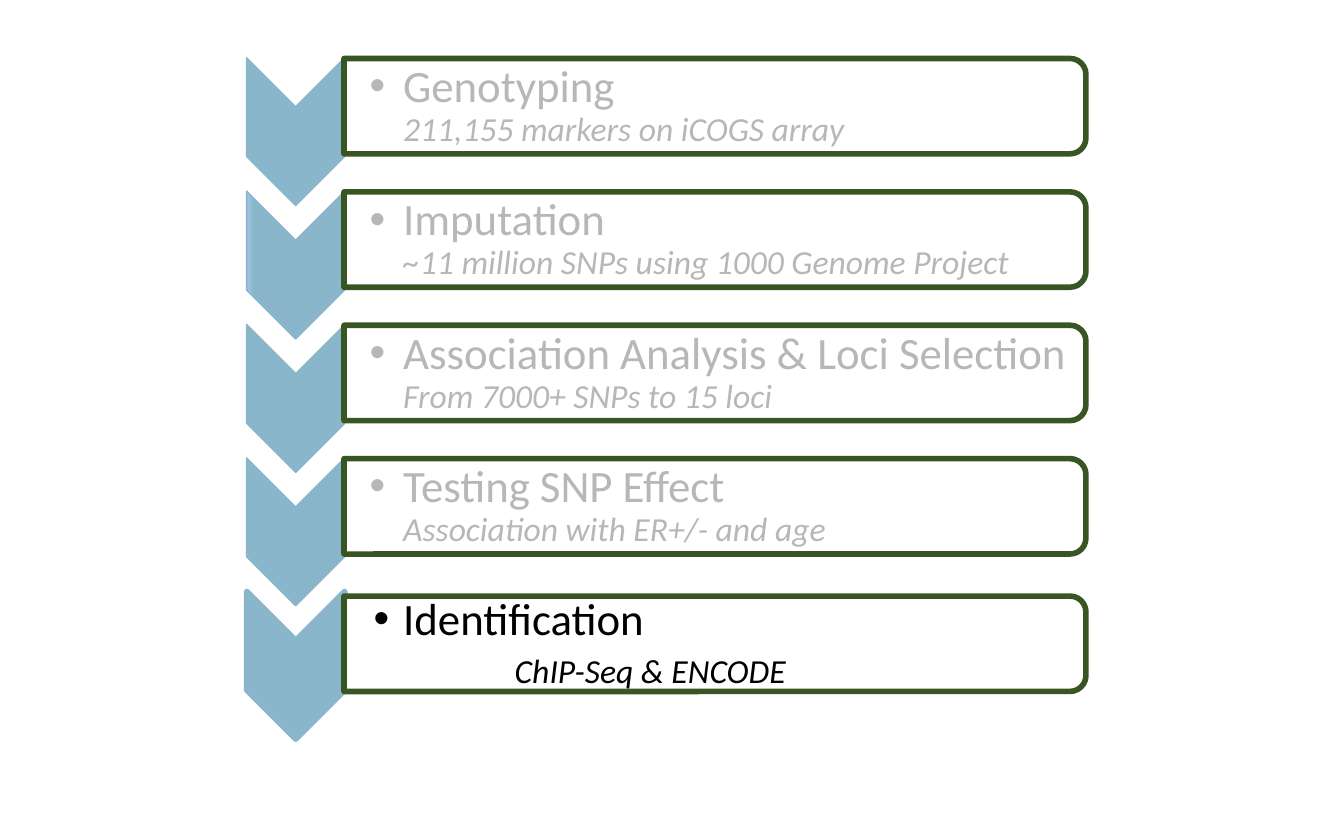
from pptx import Presentation
from pptx.dml.color import RGBColor
from pptx.enum.shapes import MSO_SHAPE
from pptx.enum.text import MSO_ANCHOR
from pptx.oxml.ns import qn
from pptx.util import Inches, Pt
from lxml import etree

CHEVRON = MSO_SHAPE.CHEVRON
ROUNDED_BAR = MSO_SHAPE.ROUND_2_SAME_RECTANGLE
MIDDLE = MSO_ANCHOR.MIDDLE

BLUE = RGBColor(0x8A, 0xB6, 0xCB)
LIGHT_BLUE = RGBColor(0x9C, 0xC2, 0xE5)
GREEN = RGBColor(0x38, 0x56, 0x23)
WHITE = RGBColor(0xFF, 0xFF, 0xFF)
GRAY = RGBColor(0xB7, 0xB7, 0xB7)
BLACK = RGBColor(0, 0, 0)

FONT = "Calibri"
STEP_PITCH = 0.9925
STEPS = [
    ("Genotyping", "211,155 markers on iCOGS array"),
    ("Imputation", "~11 million SNPs using 1000 Genome Project"),
    ("Association Analysis & Loci Selection", "From 7000+ SNPs to 15 loci"),
    ("Testing SNP Effect", "Association with ER+/- and age"),
    ("Identification", "ChIP-Seq & ENCODE"),
]


def add_turned_shape(page, kind, center, size, adjustments, color, line, width):
    """Add a preset shape turned a quarter clockwise about its center."""
    (x, y), (length, depth) = center, size
    shape = page.shapes.add_shape(kind, Inches(x - length / 2), Inches(y - depth / 2),
                                  Inches(length), Inches(depth))
    shape.rotation = 90
    shape.shadow.inherit = False
    for index, value in enumerate(adjustments):
        shape.adjustments[index] = value
    shape.fill.solid()
    shape.fill.fore_color.rgb = color
    shape.line.color.rgb = line
    shape.line.width = Pt(width)
    return shape


def set_opacity(shape, percent):
    color = shape._element.spPr.find(qn("a:solidFill"))[0]
    etree.SubElement(color, qn("a:alpha"), val=str(percent * 1000))


def set_edge_gradient(shape):
    shape.fill.gradient()
    shape.fill.gradient_angle = 270
    stops = shape.fill.gradient_stops
    for stop, position, color in zip(stops, (0.93, 0.98), (BLUE, LIGHT_BLUE)):
        stop.position = position
        stop.color.rgb = color


def set_indent(para, left, first=0.0):
    properties = para._p.get_or_add_pPr()
    properties.set("marL", str(Inches(left)))
    properties.set("indent", str(Inches(first)))
    return properties


def add_bullet(para, left, first):
    properties = set_indent(para, left, first)
    etree.SubElement(properties, qn("a:buFont"), typeface="Arial")
    etree.SubElement(properties, qn("a:buChar"), char="•")


def add_text(para, text, size=24, color=GRAY, italic=False):
    span = para.add_run()
    span.text = text
    span.font.name = FONT
    span.font.size = Pt(size)
    span.font.color.rgb = color
    span.font.italic = italic


def add_label(page, top, heading, detail, current):
    box = page.shapes.add_textbox(Inches(2.56), Inches(top), Inches(5.48), Inches(0.64))
    frame = box.text_frame
    frame.word_wrap = True
    frame.vertical_anchor = MIDDLE
    frame.margin_left = Inches(0.19)
    frame.margin_top = frame.margin_right = frame.margin_bottom = Inches(0.02)

    color = BLACK if current else GRAY
    para = frame.paragraphs[0]
    para.line_spacing = 0.9
    add_bullet(para, 0.25, -0.22 if current else -0.25)
    add_text(para, heading, color=color)
    if current:
        # The current step sets its detail further in, on its own line
        para = frame.add_paragraph()
        para.line_spacing = 0.9
        para.space_before = Pt(5)
        set_indent(para, 1.08)
    else:
        para.add_line_break()
    add_text(para, detail, size=18, color=color, italic=True)


def add_step(page, index, heading, detail):
    current = index == len(STEPS) - 1
    offset = index * STEP_PITCH
    bar_offset = offset + (0.03 if current else 0)

    # Downward chevron
    chevron = add_turned_shape(page, CHEVRON, (2.2, 0.98 + offset), (1.1, 0.73),
                               [0.5], BLUE, BLUE, 3 if current else 0.75)
    if index == 1:
        set_edge_gradient(chevron)

    # Outlined bar
    bar = add_turned_shape(page, ROUNDED_BAR, (5.32, 0.79 + bar_offset), (0.71, 5.52),
                           [0.167, 0], WHITE, GREEN, 3)
    set_opacity(bar, 69 if index == 0 else 90)

    # Step name and detail
    add_label(page, 0.47 + bar_offset, heading, detail, current)


def main():
    deck = Presentation()
    deck.slide_width = Inches(10)
    deck.slide_height = Inches(6.25)
    page = deck.slides.add_slide(deck.slide_layouts[6])
    for index, (heading, detail) in enumerate(STEPS):
        add_step(page, index, heading, detail)
    deck.save("out.pptx")


if __name__ == "__main__":
    main()
